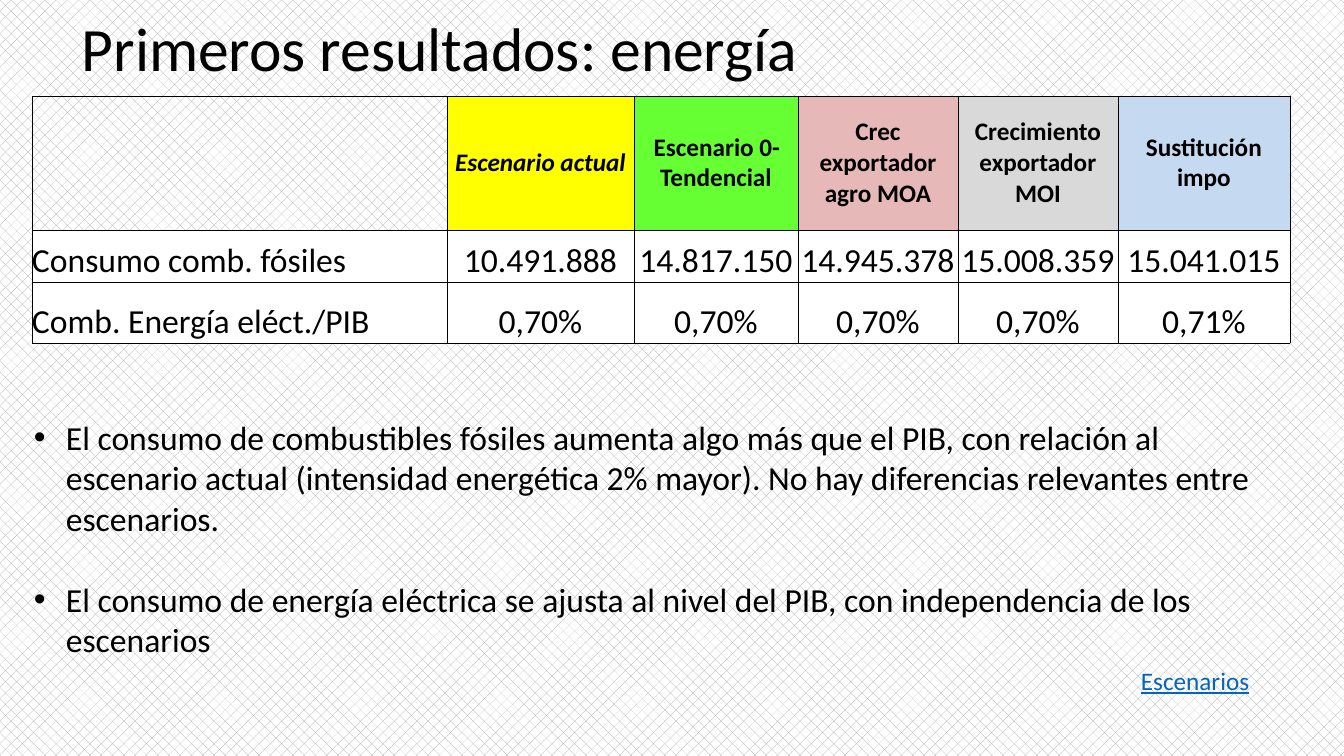
import lxml.etree
import pptx
import pptx.dml.color
import pptx.enum.dml
import pptx.enum.text
import pptx.oxml
import pptx.oxml.ns
import pptx.util

RGBColor = pptx.dml.color.RGBColor
ANCHOR = pptx.enum.text.MSO_ANCHOR
ALIGN = pptx.enum.text.PP_ALIGN
AUTO_SIZE = pptx.enum.text.MSO_AUTO_SIZE

BLACK = RGBColor(0x00, 0x00, 0x00)
WHITE = RGBColor(0xFF, 0xFF, 0xFF)
PATTERN_GRAY = RGBColor(0xA5, 0xA5, 0xA5)
YELLOW = RGBColor(0xFF, 0xFF, 0x00)
GREEN = RGBColor(0x66, 0xFF, 0x33)
PINK = RGBColor(0xE6, 0xB8, 0xB7)
LIGHT_GRAY = RGBColor(0xD9, 0xD9, 0xD9)
LIGHT_BLUE = RGBColor(0xC5, 0xD9, 0xF1)
LINK_BLUE = RGBColor(0x05, 0x63, 0xC1)

FONT = "Calibri"
SLIDE_WIDTH, SLIDE_HEIGHT = 1344, 756
EMU_PER_PX = 12192000 / SLIDE_WIDTH

COLUMN_WIDTHS = [415, 187, 164, 160, 160, 172]
ROW_HEIGHTS = [134, 52, 61]
SCENARIOS = [
    ("Escenario actual", YELLOW),
    ("Escenario 0-Tendencial", GREEN),
    ("Crec exportador agro MOA", PINK),
    ("Crecimiento exportador MOI", LIGHT_GRAY),
    ("Sustitución impo", LIGHT_BLUE),
]
RESULTS = [
    ["Consumo comb. fósiles", "10.491.888", "14.817.150", "14.945.378", "15.008.359", "15.041.015"],
    ["Comb. Energía eléct./PIB", "0,70%", "0,70%", "0,70%", "0,70%", "0,71%"],
]
FINDINGS = [
    "El consumo de combustibles fósiles aumenta algo más que el PIB, con relación al escenario "
    "actual (intensidad energética 2% mayor). No hay diferencias relevantes entre escenarios.",
    "El consumo de energía eléctrica se ajusta al nivel del PIB, con independencia de los escenarios",
]


def px(length):
    return pptx.util.Emu(round(length * EMU_PER_PX))


def write(paragraph, text, size=24, color=BLACK, bold=False, italic=False,
          underline=False, align=ALIGN.LEFT):
    paragraph.alignment = align
    run = paragraph.add_run()
    run.text = text
    font = run.font
    font.name = FONT
    font.size = pptx.util.Pt(size)
    font.color.rgb = color
    font.bold, font.italic, font.underline = bold, italic, underline


def add_text_frame(slide, box, wrap=True, auto_size=AUTO_SIZE.NONE, anchor=ANCHOR.TOP):
    frame = slide.shapes.add_textbox(*map(px, box)).text_frame
    frame.word_wrap = wrap
    frame.auto_size = auto_size
    frame.vertical_anchor = anchor
    return frame


def set_bullet(paragraph, indent):
    properties = paragraph._p.get_or_add_pPr()
    properties.set("marL", str(px(indent)))
    properties.set("indent", str(-px(indent)))
    for tag, name, value in (("a:buFont", "typeface", "Arial"), ("a:buChar", "char", "•")):
        bullet = lxml.etree.SubElement(properties, pptx.oxml.ns.qn(tag))
        bullet.set(name, value)


def set_borders(cell):
    properties = cell._tc.get_or_add_tcPr()
    for side in ("lnL", "lnR", "lnT", "lnB"):
        properties.append(pptx.oxml.parse_xml(
            f'<a:{side} {pptx.oxml.ns.nsdecls("a")} w="{pptx.util.Pt(0.5)}">'
            f'<a:solidFill><a:srgbClr val="{BLACK}"/></a:solidFill></a:{side}>'))


def format_cell(cell, anchor, fill=None):
    set_borders(cell)
    cell.margin_left = cell.margin_right = cell.margin_top = cell.margin_bottom = 0
    cell.vertical_anchor = anchor
    if fill is None:
        cell.fill.background()
    else:
        cell.fill.solid()
        cell.fill.fore_color.rgb = fill


def add_background(slide):
    fill = slide.background.fill
    fill.patterned()
    fill.pattern = pptx.enum.dml.MSO_PATTERN.PERCENT_25
    fill.fore_color.rgb = PATTERN_GRAY
    fill.back_color.rgb = WHITE


def add_title(slide, box):
    paragraph = add_text_frame(slide, box, anchor=ANCHOR.MIDDLE).paragraphs[0]
    paragraph.line_spacing = 0.9
    write(paragraph, "Primeros resultados: energía", size=44)


def add_results_table(slide, left, top):
    table = slide.shapes.add_table(
        len(ROW_HEIGHTS), len(COLUMN_WIDTHS), px(left), px(top),
        px(sum(COLUMN_WIDTHS)), px(sum(ROW_HEIGHTS))).table
    table.first_row = table.horz_banding = False
    for column, width in zip(table.columns, COLUMN_WIDTHS):
        column.width = px(width)
    for row, height in zip(table.rows, ROW_HEIGHTS):
        row.height = px(height)

    format_cell(table.cell(0, 0), ANCHOR.MIDDLE)
    for index, (scenario, color) in enumerate(SCENARIOS, start=1):
        cell = table.cell(0, index)
        format_cell(cell, ANCHOR.MIDDLE, color)
        write(cell.text_frame.paragraphs[0], scenario, size=18, bold=True,
              italic=index == 1, align=ALIGN.CENTER)
    for row_index, values in enumerate(RESULTS, start=1):
        for index, value in enumerate(values):
            cell = table.cell(row_index, index)
            format_cell(cell, ANCHOR.BOTTOM, WHITE)
            write(cell.text_frame.paragraphs[0], value,
                  align=ALIGN.CENTER if index else ALIGN.LEFT)


def add_findings(slide, box):
    frame = add_text_frame(slide, box, auto_size=AUTO_SIZE.SHAPE_TO_FIT_TEXT)
    for index, finding in enumerate(FINDINGS):
        paragraph = frame.add_paragraph() if index else frame.paragraphs[0]
        if index:
            paragraph.space_before = pptx.util.Pt(29)
        set_bullet(paragraph, 32)
        write(paragraph, finding)


def add_scenarios_label(slide, box):
    frame = add_text_frame(slide, box, wrap=False, auto_size=AUTO_SIZE.SHAPE_TO_FIT_TEXT)
    write(frame.paragraphs[0], "Escenarios", size=18, color=LINK_BLUE, underline=True)


def main():
    presentation = pptx.Presentation()
    presentation.slide_width = px(SLIDE_WIDTH)
    presentation.slide_height = px(SLIDE_HEIGHT)
    slide = presentation.slides.add_slide(presentation.slide_layouts[6])
    add_background(slide)
    add_title(slide, (72, 11, 1211, 81))
    add_results_table(slide, 32, 96)
    add_findings(slide, (24, 412, 1258, 254))
    add_scenarios_label(slide, (1131, 660, 130, 40))
    presentation.save("out.pptx")


if __name__ == "__main__":
    main()
